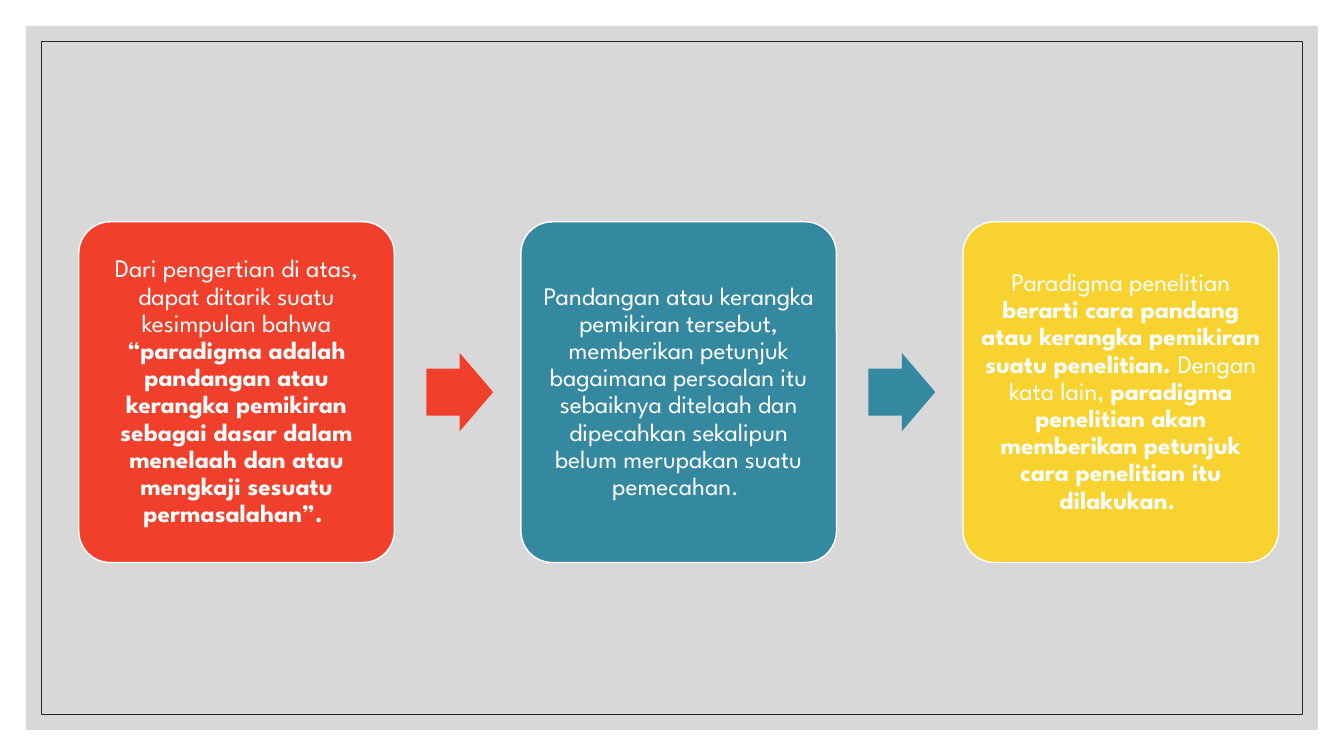
from dataclasses import dataclass

from pptx import Presentation
from pptx.dml.color import RGBColor as RGB
from pptx.enum.shapes import MSO_SHAPE as SHAPE
from pptx.enum.text import MSO_ANCHOR as ANCHOR, PP_ALIGN as ALIGN
from pptx.oxml.xmlchemy import OxmlElement
from pptx.util import Pt


@dataclass(frozen=True)
class Theme:
    panel: str = "BFBFBF"
    panel_alpha: int = 60000
    border: str = "262626"
    red: str = "F03F2B"
    teal: str = "3488A0"
    yellow: str = "F8D22F"
    text: str = "FFFFFF"
    font: str = "League Spartan"
    body_size: float = 18


THEME = Theme()

# Each step: colour, then (wording, bold) pieces
STEPS = [
    (THEME.red, [
        ("Dari pengertian di atas, dapat ditarik suatu kesimpulan bahwa ", False),
        ("“paradigma adalah pandangan atau kerangka pemikiran sebagai dasar "
         "dalam menelaah dan atau mengkaji sesuatu permasalahan”. ", True),
    ]),
    (THEME.teal, [
        ("Pandangan atau kerangka pemikiran tersebut, memberikan petunjuk "
         "bagaimana persoalan itu sebaiknya ditelaah dan dipecahkan "
         "sekalipun belum merupakan suatu pemecahan. ", False),
    ]),
    (THEME.yellow, [
        ("Paradigma penelitian ", False),
        ("berarti cara pandang atau kerangka pemikiran suatu penelitian. ", True),
        ("Dengan kata lain, ", False),
        ("paradigma penelitian akan memberikan petunjuk cara penelitian itu "
         "dilakukan. ", True),
    ]),
]


def add_block(slide, preset, box, fill=None, line=None, weight=1):
    """Add a preset shape in box (left, top, width, height), in points."""
    block = slide.shapes.add_shape(preset, *(Pt(length) for length in box))
    block.shadow.inherit = False
    if fill:
        block.fill.solid()
        block.fill.fore_color.rgb = RGB.from_string(fill)
    else:
        block.fill.background()
    if line:
        block.line.color.rgb = RGB.from_string(line)
        block.line.width = Pt(weight)
    else:
        block.line.fill.background()
    return block


def draw_frame(slide, box, inset=10.8):
    """Translucent grey panel with a thin border inside it."""
    left, top, width, height = box
    panel = add_block(slide, SHAPE.RECTANGLE, box, fill=THEME.panel)
    alpha = OxmlElement("a:alpha")
    alpha.set("val", str(THEME.panel_alpha))
    panel.fill._xPr.solidFill[0].append(alpha)
    border_box = (left + inset, top + inset, width - 2 * inset, height - 2 * inset)
    add_block(slide, SHAPE.RECTANGLE, border_box, line=THEME.border, weight=0.5)


def draw_card(slide, box, colour, pieces):
    """Rounded card with centred text."""
    card = add_block(slide, SHAPE.ROUNDED_RECTANGLE, box, colour, THEME.text)
    card.adjustments[0] = 0.1

    frame = card.text_frame
    frame.word_wrap = True
    frame.vertical_anchor = ANCHOR.MIDDLE
    frame.margin_left = frame.margin_right = Pt(5.25)
    frame.margin_top = frame.margin_bottom = Pt(5.25)

    statement = frame.paragraphs[0]
    statement.alignment = ALIGN.CENTER
    statement.line_spacing = 0.9
    for wording, bold in pieces:
        run = statement.add_run()
        run.text = wording
        run.font.name = THEME.font
        run.font.size = Pt(THEME.body_size)
        run.font.bold = bold
        run.font.color.rgb = RGB.from_string(THEME.text)


def draw_process(slide, box, steps):
    """Row of equal cards, each followed by an arrow except the last."""
    left, top, width, height = box
    card_width, arrow_width, arrow_height, arrow_gap = 225.4, 47.8, 55.9, 22.8
    pitch = (width - card_width) / (len(steps) - 1)
    for index, (colour, pieces) in enumerate(steps):
        card_left = left + index * pitch
        draw_card(slide, (card_left, top, card_width, height), colour, pieces)
        if index < len(steps) - 1:
            arrow_box = (card_left + card_width + arrow_gap,
                         top + (height - arrow_height) / 2,
                         arrow_width, arrow_height)
            arrow = add_block(slide, SHAPE.RIGHT_ARROW, arrow_box, colour)
            arrow.adjustments[0] = 0.6
            arrow.adjustments[1] = 0.5


def main():
    deck = Presentation()
    deck.slide_width, deck.slide_height = Pt(960), Pt(540)
    slide = deck.slides.add_slide(deck.slide_layouts[6])
    draw_frame(slide, (18.6, 18.6, 922.8, 502.8))
    draw_process(slide, (56.3, 158.4, 857, 243.4), STEPS)
    deck.save("out.pptx")


if __name__ == "__main__":
    main()
